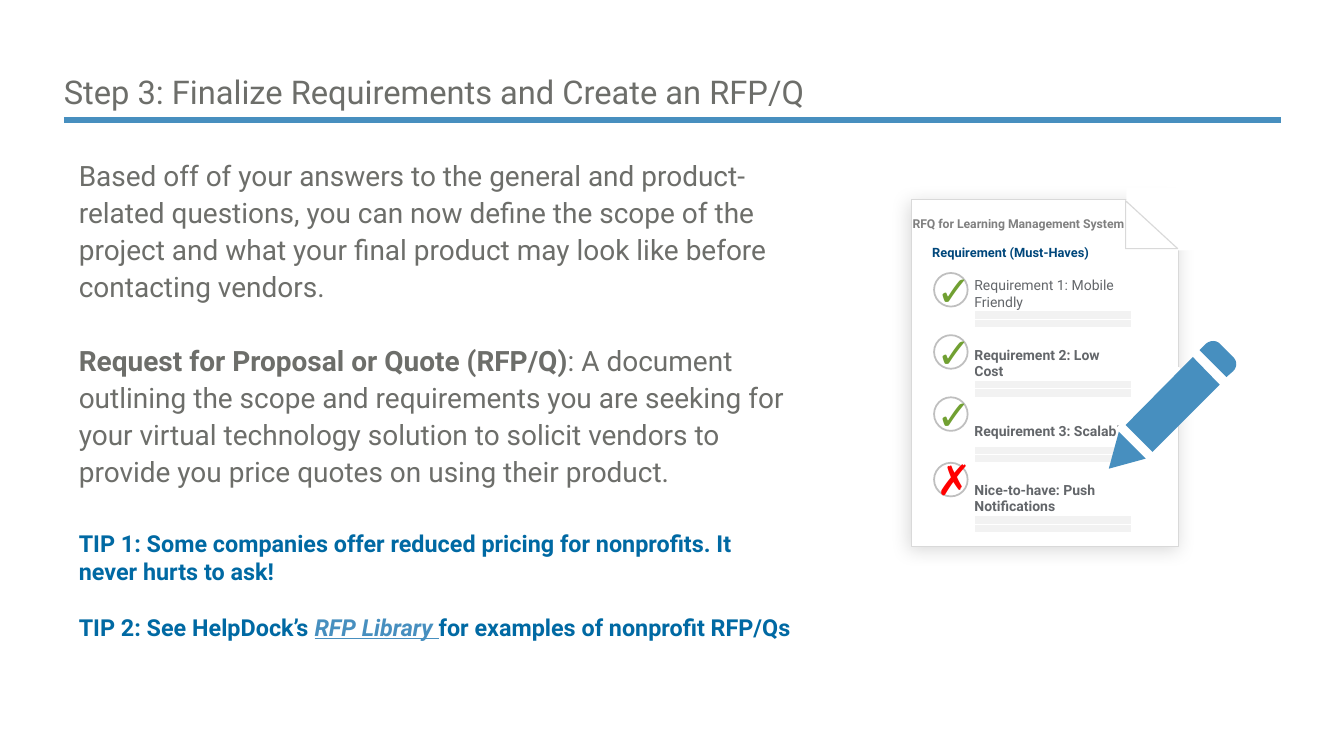
from dataclasses import dataclass

from lxml import etree
from pptx import Presentation
from pptx.dml.color import RGBColor
from pptx.enum.shapes import MSO_CONNECTOR, MSO_SHAPE
from pptx.enum.text import MSO_ANCHOR, MSO_AUTO_SIZE, PP_ALIGN
from pptx.oxml.ns import qn
from pptx.util import Inches, Pt

LEFT, CENTER = PP_ALIGN.LEFT, PP_ALIGN.CENTER
TOP, MIDDLE, BOTTOM = MSO_ANCHOR.TOP, MSO_ANCHOR.MIDDLE, MSO_ANCHOR.BOTTOM
NO_FIT = MSO_AUTO_SIZE.NONE
STRAIGHT = MSO_CONNECTOR.STRAIGHT
RECT, OVAL = MSO_SHAPE.RECTANGLE, MSO_SHAPE.OVAL
FOLD, ROUNDED = MSO_SHAPE.RIGHT_TRIANGLE, MSO_SHAPE.ROUNDED_RECTANGLE

COLS, ROWS = 160, 90
CELL = Inches(16) // COLS


@dataclass(frozen=True)
class Theme:
    """Colours, fonts and type sizes of the slide."""
    font: str = "Roboto"
    mark_font: str = "Arial"
    grey: str = "6D6E6A"
    blue: str = "478FBF"
    tip: str = "0069A3"
    navy: str = "00477B"
    white: str = "FFFFFF"
    edge: str = "D9D9D9"
    ring: str = "BFBFBF"
    bar: str = "F2F2F2"
    item: str = "63666A"
    heading: str = "808080"
    yes: str = "71A032"
    no: str = "FF0000"
    title_size: float = 28
    body_size: float = 24
    tip_size: float = 20
    mark_size: float = 36
    item_size: float = 12
    must_size: float = 11
    heading_size: float = 10.5


T = Theme()


@dataclass(frozen=True)
class Box:
    """A region measured in columns and rows of the slide grid."""
    x: float
    y: float
    w: float
    h: float

    def inner(self, dx, dy, w, h):
        """Return a region offset from this one."""
        return Box(self.x + dx, self.y + dy, w, h)

    def emu(self):
        """Return left, top, width and height in EMU."""
        return [round(v * CELL) for v in (self.x, self.y, self.w, self.h)]


def rgb(color):
    """Return a colour object."""
    return RGBColor.from_string(color)


def add_run(p, text, size, color, bold=False, italic=False, underline=False, font=T.font):
    """Add one formatted run."""
    r = p.add_run()
    r.text = text
    r.font.name, r.font.size, r.font.color.rgb = font, Pt(size), rgb(color)
    r.font.bold, r.font.italic, r.font.underline = bold, italic, underline


def set_frame(tf, anchor, insets):
    """Set anchor, wrapping and insets in inches of a text frame."""
    tf.word_wrap, tf.auto_size, tf.vertical_anchor = True, NO_FIT, anchor
    tf.margin_left, tf.margin_top, tf.margin_right, tf.margin_bottom = map(Inches, insets)


def add_label(slide, box, text, size, color, align=LEFT, **style):
    """Add a text box with one line of text."""
    tf = slide.shapes.add_textbox(*box.emu()).text_frame
    set_frame(tf, TOP, (0.1, 0.05, 0.1, 0.05))
    p = tf.paragraphs[0]
    p.alignment = align
    add_run(p, text, size, color, **style)


def paint(sp, fill, line=None, width=1):
    """Set fill and line of a shape and remove its shadow."""
    sp.shadow.inherit = False
    sp.fill.solid()
    sp.fill.fore_color.rgb = rgb(fill)
    if line:
        sp.line.color.rgb, sp.line.width = rgb(line), Pt(width)
    else:
        sp.line.fill.background()


def add_preset(slide, kind, box, line=None, width=1):
    """Add a white preset shape."""
    sp = slide.shapes.add_shape(kind, *box.emu())
    paint(sp, T.white, line, width)
    return sp


def add_outline(slide, box, points):
    """Add a blue closed outline from points relative to a box."""
    pts = [((box.x + x) * CELL, (box.y + y) * CELL) for x, y in points]
    builder = slide.shapes.build_freeform(*pts[0], scale=1.0)
    builder.add_line_segments(pts[1:], close=True)
    paint(builder.convert_to_shape(), T.blue)


def curve(a, b, c, d, steps=8):
    """Return points along a cubic curve."""
    ts = [i / steps for i in range(steps + 1)]
    return [tuple((1 - t) ** 3 * i + 3 * t * (1 - t) ** 2 * j + 3 * t * t * (1 - t) * k + t ** 3 * m
                  for i, j, k, m in zip(a, b, c, d)) for t in ts]


def add_title(slide, box):
    """Place the title and the rule below it."""
    title = slide.shapes.title
    title.left, title.top, title.width, title.height = box.emu()
    set_frame(title.text_frame, BOTTOM, (0, 0, 0, 0))
    p = title.text_frame.paragraphs[0]
    p.alignment = LEFT
    add_run(p, "Step 3: Finalize Requirements and Create an RFP/Q", T.title_size, T.grey)
    x, y, w, _ = box.inner(0, 9, box.w, 0).emu()
    rule = slide.shapes.add_connector(STRAIGHT, x, y, x + w, y)
    rule.line.color.rgb, rule.line.width = rgb(T.blue), Pt(4.5)
    etree.SubElement(rule._element.spPr, qn("a:effectLst"))


def add_body(slide, box):
    """Place the explanation and the tips."""
    main_style, tip = (T.body_size, T.grey), (T.tip_size, T.tip)
    paragraphs = [
        (1.1, 0, [("Based off of your answers to the general and product-related questions, you can now "
                   "define the scope of the project and what your final product may look like before "
                   "contacting vendors.", *main_style)]),
        (1.1, 31.5, [("Request for Proposal or Quote (RFP/Q)", *main_style, True),
                     (": A document outlining the scope and requirements you are seeking for your virtual "
                      "technology solution to solicit vendors to provide you price quotes on using their "
                      "product.", *main_style)]),
        (1, 35.5, [("TIP 1: Some companies offer reduced pricing for nonprofits. It never hurts to ask!",
                    *tip, True)]),
        (1, 24, [("TIP 2: See HelpDock’s ", *tip, True),
                 ("RFP Library ", T.tip_size, T.blue, True, True, True),
                 ("for examples of nonprofit RFP/Qs", *tip, True)]),
    ]
    tf = slide.shapes.add_textbox(*box.emu()).text_frame
    set_frame(tf, TOP, (0.1, 0.04, 0.04, 0.04))
    for i, (spacing, before, runs) in enumerate(paragraphs):
        p = tf.add_paragraph() if i else tf.paragraphs[0]
        p.line_spacing, p.space_before = spacing, Pt(before)
        for run in runs:
            add_run(p, *run)


def add_borders(cell):
    """Give a cell thin white borders."""
    tcPr = cell._tc.get_or_add_tcPr()
    for i, side in enumerate(("a:lnL", "a:lnR", "a:lnT", "a:lnB")):
        ln = etree.Element(qn(side), w=str(Pt(1)))
        etree.SubElement(etree.SubElement(ln, qn("a:solidFill")), qn("a:srgbClr"), val=T.white)
        tcPr.insert(i, ln)


def add_requirements(slide, box):
    """Place the requirement table with two bars under each entry."""
    items = [("Requirement 1: Mobile Friendly", 4), ("Requirement 2: Low Cost", 4),
             ("Requirement 3: Scalable", 3.5), ("Nice-to-have: Push Notifications", 4)]
    rows = []
    for text, height in items:
        rows += [(text, height, None), ("", 1, T.bar), ("", 1, T.bar), ("", 2.3, None)]
    rows.pop()
    table = slide.shapes.add_table(len(rows), 1, *box.emu()).table
    table.first_row = table.horz_banding = False
    for i, (text, height, fill) in enumerate(rows):
        table.rows[i].height = round(height * CELL)
        cell = table.cell(i, 0)
        cell.margin_left = cell.margin_right = cell.margin_top = cell.margin_bottom = 0
        cell.vertical_anchor = MIDDLE
        if fill:
            cell.fill.solid()
            cell.fill.fore_color.rgb = rgb(fill)
        else:
            cell.fill.background()
        add_borders(cell)
        p = cell.text_frame.paragraphs[0]
        if text:
            add_run(p, text, T.item_size, T.item, bold=i > 0)
        else:
            p._p.get_or_add_endParaRPr().set("sz", "100")


def add_page(slide, box):
    """Place the folded sheet with its checklist."""
    sheet = add_preset(slide, RECT, box, T.edge)
    effects = sheet._element.spPr.find(qn("a:effectLst"))
    shadow = etree.SubElement(effects, qn("a:outerShdw"), blurRad=str(Pt(16)), dist=str(Pt(3)),
                              dir=str(135 * 60000), algn="tr", rotWithShape="0")
    color = etree.SubElement(shadow, qn("a:srgbClr"), val="000000")
    etree.SubElement(color, qn("a:alpha"), val="14000")
    add_preset(slide, RECT, box.inner(25.6, -1.5, 8.4, 7.5))
    add_requirements(slide, box.inner(7.5, 9.2, 18.7, 30.4))
    yes, no = ("✓", T.yes), ("✗", T.no)
    for y, (mark, color) in zip((8.7, 16.1, 23.5, 31.3), (yes, yes, yes, no)):
        add_preset(slide, OVAL, box.inner(2.7, y, 4, 4), T.ring, 1.5)
        add_label(slide, box.inner(2, y - 1.55, 5.3, 7.1), mark, T.mark_size, color, font=T.mark_font)
    add_label(slide, box.inner(-3.1, 1.4, 31.7, 2.8), "RFQ for Learning Management System",
              T.heading_size, T.heading, CENTER, bold=True)
    add_label(slide, box.inner(1.5, 4.8, 24, 2.9), "Requirement (Must-Haves)",
              T.must_size, T.navy, bold=True)
    add_preset(slide, FOLD, box.inner(25.5, 0.1, 6.2, 5.7), T.edge)


def add_pencil(slide, box):
    """Place the pencil and the white gap around it."""
    for *place, angle in ((7.7, 3.2, 0.7, 3, 3), (7.3, 5.1, 0.7, 3, 37.4),
                          (2.1, 9.7, 2.4, 3, 34.5), (0.8, 10.3, 5, 3, 6)):
        add_preset(slide, ROUNDED, box.inner(*place)).rotation = angle
    shaft = [(10, 2), (13.2, 5.3), (5.2, 13.3), (2, 10.1)]
    cap = [(14, 4.4), *curve((14.8, 3.7), (15.3, 3.2), (15.3, 2.5), (14.8, 2)),
           *curve((13.2, 0.4), (12.8, 0), (12.1, 0), (11.6, 0.4)), (10.8, 1.2)]
    tip = [(4.4, 14.1), (0, 15.3), (1.2, 10.9)]
    for points in (shaft, cap, tip):
        add_outline(slide, box, points)


def main():
    """Build and save the slide."""
    prs = Presentation()
    prs.slide_width, prs.slide_height = COLS * CELL, ROWS * CELL
    slide = prs.slides.add_slide(prs.slide_layouts[5])
    add_title(slide, Box(7.6, 5.3, 144.9, 7.9))
    add_body(slide, Box(8.4, 18.1, 86.7, 51.9))
    add_page(slide, Box(108.5, 23.8, 31.8, 41.3))
    add_pencil(slide, Box(132, 40.5, 15.3, 15.3))
    prs.save("out.pptx")


if __name__ == "__main__":
    main()
